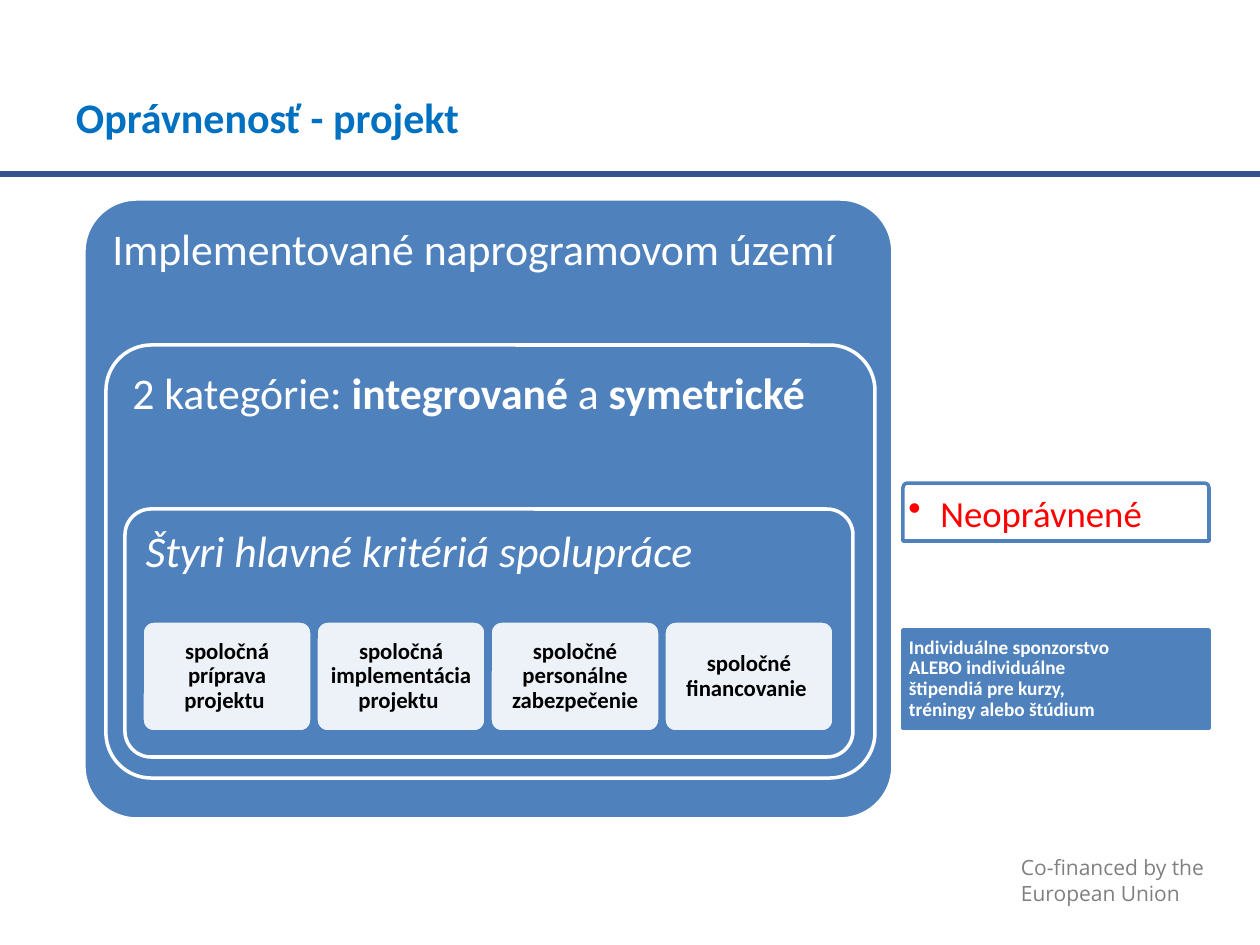
from pptx import Presentation
from pptx.dml.color import RGBColor
from pptx.enum.shapes import MSO_SHAPE as Kind, MSO_CONNECTOR as Link
from pptx.enum.text import MSO_ANCHOR as Anchor, PP_ALIGN as Align
from pptx.oxml.ns import qn
from pptx.util import Pt
from lxml.etree import SubElement

# Content: a run is (text, bold, italic)
TITLE = "Oprávnenosť - projekt"
FRAMES = [  # box, corner, runs
    ((84, 199, 809, 620), 0.085,
     [("Implementované naprogramovom území", False, False)]),
    ((106, 345, 769, 433), 0.105,
     [("2 kategórie: ", False, False), ("integrované ", True, False),
      ("a ", False, False), ("symetrické", True, False)]),
    ((125, 509, 728, 248), 0.105,
     [("Štyri hlavné kritériá spolupráce", False, True)]),
]
CARDS = ["spoločná príprava projektu ", "spoločná implementácia projektu ",
         "spoločné personálne zabezpečenie", "spoločné financovanie "]
HEAD = "Neoprávnené"
NOTE = ("Individuálne sponzorstvo ALEBO individuálne štipendiá "
        "pre kurzy, tréningy alebo štúdium")
FOOT = ["Co-financed by the", "European Union"]

BLUE, WHITE = "4F81BD", "FFFFFF"
PX = 914400 / 126


def px(n):
    return round(n * PX)


def rgb(code):
    return RGBColor.from_string(code)


def style(font, size, color, bold=False, italic=False, name="Calibri"):
    font.name, font.size = name, Pt(size)
    font.bold, font.italic = bold, italic
    font.color.rgb = rgb(color)


def setup(shape, pads, anchor):
    frame = shape.text_frame
    frame.word_wrap = True
    frame.vertical_anchor = anchor
    (frame.margin_left, frame.margin_top,
     frame.margin_right, frame.margin_bottom) = map(px, pads)
    return frame


def label(box, lines, size, color, pads, anchor, **look):
    frame = setup(slide.shapes.add_textbox(*map(px, box)), pads, anchor)
    frame.text = "\n".join(lines)
    for para in frame.paragraphs:
        style(para.runs[0].font, size, color, **look)


def block(kind, box, fill, line, corner=(), alpha=None):
    shape = slide.shapes.add_shape(kind, *map(px, box))
    shape.shadow.inherit = False
    for i, value in enumerate(corner):
        shape.adjustments[i] = value
    shape.fill.solid()
    shape.fill.fore_color.rgb = rgb(fill)
    if alpha:
        tint = shape.fill._xPr.find(qn("a:solidFill"))[0]
        SubElement(tint, qn("a:alpha")).set("val", str(alpha * 1000))
    shape.line.color.rgb = rgb(line)
    shape.line.width = Pt(2)
    return shape


def write(shape, runs, size, color, pads, anchor, align=Align.LEFT):
    para = setup(shape, pads, anchor).paragraphs[0]
    para.alignment = align
    para.line_spacing = 0.9
    for text, bold, italic in runs:
        run = para.add_run()
        run.text = text
        style(run.font, size, color, bold, italic)
    return para


deck = Presentation()
deck.slide_width, deck.slide_height = px(1260), px(945)
slide = deck.slides.add_slide(deck.slide_layouts[6])

# Rule, footer and title
rule = slide.shapes.add_connector(Link.STRAIGHT, 0, px(174), px(1260), px(174))
rule.line.color.rgb = rgb("37518A")
rule.line.width = Pt(3)
SubElement(rule._element.spPr, qn("a:effectLst"))
label((1008, 849, 217, 63), FOOT, 12, "808080", (13, 6, 13, 6), Anchor.TOP,
      name="Open Sans")
label((63, 38, 895, 158), [TITLE], 24, "0070C0", (13, 6, 13, 6),
      Anchor.MIDDLE, bold=True)

# Nested frames
for box, corner, runs in FRAMES:
    shape = block(Kind.ROUNDED_RECTANGLE, box, BLUE, WHITE, [corner])
    write(shape, runs, 25, WHITE, (13, 13, 13, 13), Anchor.TOP)

# Row of criteria cards
for i, text in enumerate(CARDS):
    box = (142 + 174 * i, 621, 170, 111)
    card = block(Kind.ROUNDED_RECTANGLE, box, WHITE, BLUE, [0.105], 90)
    write(card, [(text, True, False)], 13, "000000", (6, 6, 6, 6),
          Anchor.MIDDLE, Align.CENTER)

# Ineligible: heading with bullet, then note
head = block(Kind.ROUND_2_SAME_RECTANGLE, (903, 483, 306, 58), WHITE, BLUE,
             [0.08, 0], 90)
para = write(head, [(HEAD, False, False)], 21, "FF0000", (4, 11, 4, 4),
             Anchor.TOP)
props = para._p.get_or_add_pPr()
props.set("marL", str(px(32)))
props.set("indent", str(px(-32)))
SubElement(props, qn("a:buChar")).set("char", "•")
note = block(Kind.RECTANGLE, (903, 630, 306, 98), BLUE, BLUE)
write(note, [(NOTE, True, False)], 11, WHITE, (6, 0, 93, 0), Anchor.MIDDLE)

deck.save("out.pptx")
